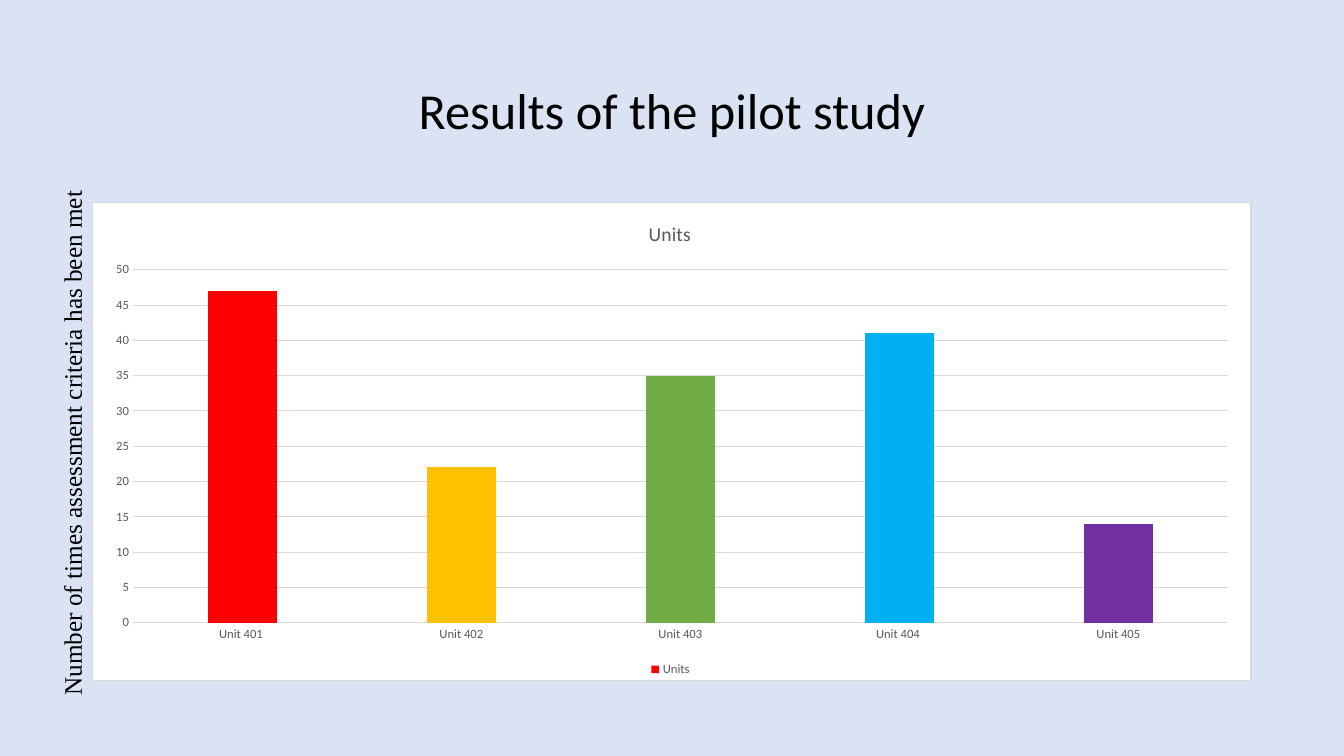
from lxml import etree
from pptx import Presentation
from pptx.chart.data import CategoryChartData
from pptx.dml.color import RGBColor
from pptx.enum.chart import XL_CHART_TYPE as ChartType, XL_LEGEND_POSITION as LegendPos
from pptx.enum.chart import XL_TICK_MARK as TickMark
from pptx.enum.text import MSO_ANCHOR as Anchor, PP_ALIGN as Align
from pptx.oxml.ns import nsdecls
from pptx.util import Cm, Pt

TITLE = "Results of the pilot study"
AXIS_LABEL = "Number of times assessment criteria has been met"
SERIES = "Units "
BLACK = RGBColor(0x00, 0x00, 0x00)
GREY = RGBColor(0x59, 0x59, 0x59)
RULE = RGBColor(0xD9, 0xD9, 0xD9)
WHITE = RGBColor(0xFF, 0xFF, 0xFF)
BACKGROUND = RGBColor(0xDA, 0xE3, 0xF3)
RED = RGBColor(0xFF, 0x00, 0x00)
AMBER = RGBColor(0xFF, 0xC0, 0x00)
GREEN = RGBColor(0x70, 0xAD, 0x47)
BLUE = RGBColor(0x00, 0xB0, 0xF0)
PURPLE = RGBColor(0x70, 0x30, 0xA0)
UNITS = [
    ("Unit 401 ", 47, RED),
    ("Unit 402", 22, AMBER),
    ("Unit 403", 35, GREEN),
    ("Unit 404 ", 41, BLUE),
    ("Unit 405", 14, PURPLE),
]


def set_font(font, size, color, name="Calibri"):
    font.size, font.name, font.bold = Pt(size), name, False
    font.color.rgb = color


def set_line(line, color=RULE):
    line.color.rgb = color
    line.width = Pt(0.75)


def add_text(slide, text, box, size, name):
    sp = slide.shapes.add_textbox(*map(Cm, box))
    tf = sp.text_frame
    tf.word_wrap = True
    p = tf.paragraphs[0]
    p.text = text
    set_font(p.font, size, BLACK, name)
    return sp


def add_units_chart(slide):
    data = CategoryChartData()
    data.categories = [name for name, _, _ in UNITS]
    data.add_series(SERIES, [value for _, value, _ in UNITS])
    chart = slide.shapes.add_chart(
        ChartType.COLUMN_CLUSTERED, Cm(2.33), Cm(5.08), Cm(29.21), Cm(12.09), data
    ).chart
    set_font(chart.font, 10, BLACK)

    chart.has_title = True
    p = chart.chart_title.text_frame.paragraphs[0]
    p.text = SERIES
    set_font(p.font, 14, GREY)
    chart.chart_title.include_in_layout = False

    chart.has_legend = True
    chart.legend.position = LegendPos.BOTTOM
    chart.legend.include_in_layout = False
    set_font(chart.legend.font, 9, GREY)

    for axis in (chart.category_axis, chart.value_axis):
        axis.major_tick_mark = axis.minor_tick_mark = TickMark.NONE
        set_font(axis.tick_labels.font, 9, GREY)
    set_line(chart.category_axis.format.line)
    chart.value_axis.format.line.fill.background()
    chart.value_axis.has_major_gridlines = True
    set_line(chart.value_axis.major_gridlines.format.line)

    plot = chart.plots[0]
    plot.vary_by_categories = False
    plot.gap_width, plot.overlap = 219, -27
    series = plot.series[0]
    series.format.fill.solid()
    series.format.fill.fore_color.rgb = RED
    for i, (_, _, color) in enumerate(UNITS[1:], 1):
        fill = series.points[i].format.fill
        fill.solid()
        fill.fore_color.rgb = color

    frame = etree.fromstring(
        f'<c:spPr {nsdecls("c", "a")}>'
        f'<a:solidFill><a:srgbClr val="{WHITE}"/></a:solidFill>'
        f'<a:ln w="{Pt(0.75)}"><a:solidFill><a:srgbClr val="{RULE}"/></a:solidFill></a:ln>'
        "</c:spPr>"
    )
    chart.element.chart.addnext(frame)


def main():
    prs = Presentation()
    prs.slide_width, prs.slide_height = Cm(33.87), Cm(19.05)
    slide = prs.slides.add_slide(prs.slide_layouts[6])
    slide.background.fill.solid()
    slide.background.fill.fore_color.rgb = BACKGROUND

    tf = add_text(slide, TITLE, (2.33, 1.01, 29.21, 3.68), 36, "Calibri").text_frame
    tf.vertical_anchor = Anchor.MIDDLE
    tf.paragraphs[0].alignment = Align.CENTER
    tf.paragraphs[0].line_spacing = 0.9

    add_units_chart(slide)
    label = add_text(slide, AXIS_LABEL, (-6.65, 8.79, 16.94, 1.03), 18, "Times New Roman")
    label.rotation = 270
    prs.save("out.pptx")


if __name__ == "__main__":
    main()
